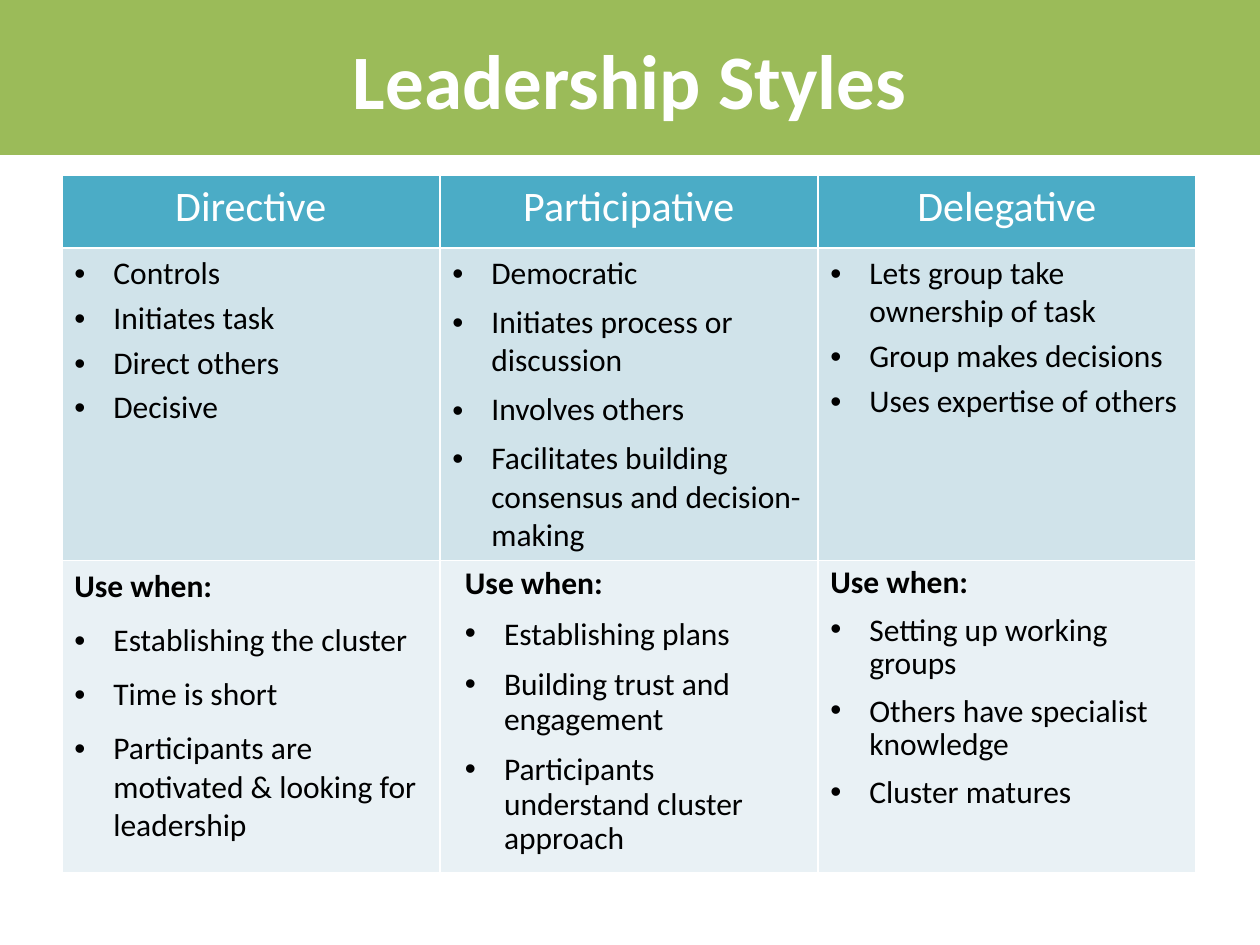
from lxml import etree
from pptx import Presentation
from pptx import util as u
from pptx.dml.color import RGBColor
from pptx.enum import shapes, text
from pptx.oxml.ns import qn


def color(fmt, value):
    fmt.solid()
    fmt.fore_color.rgb = RGBColor.from_string(value)


def write(p, words, size, value, bold=False):
    r = p.add_run()
    r.text = words
    font = {"name": "Calibri", "size": u.Pt(size), "bold": bold}
    for key, val in font.items():
        setattr(r.font, key, val)
    color(r.font.fill, value)


prs = Presentation()
prs.slide_width, prs.slide_height = u.Inches(10), u.Inches(7.5)
s = prs.slides.add_slide(prs.slide_layouts[6])

band = s.shapes.add_shape(shapes.MSO_SHAPE.RECTANGLE, u.Inches(0), u.Inches(-0.02),
                          u.Inches(10), u.Inches(1.25))
band.shadow.inherit = False
color(band.fill, "9BBB59")
band.line.fill.background()

title = s.shapes.add_textbox(u.Inches(0), u.Inches(0), u.Inches(10), u.Inches(1.25))
tf = title.text_frame
for key, val in {"word_wrap": True, "vertical_anchor": text.MSO_ANCHOR.MIDDLE}.items():
    setattr(tf, key, val)
tf.paragraphs[0].alignment = text.PP_ALIGN.CENTER
write(tf.paragraphs[0], "Leadership Styles", 44, "FFFFFF", True)

tight = {"space_before": u.Pt(3.6)}
after = {"space_after": u.Pt(6)}
loose = {"space_before": u.Pt(9)}
use = "Use when:"
rows = [
    (0.58, "4BACC6", [
        (["Directive"], 0, {}),
        (["Participative"], 0, {}),
        (["Delegative"], 0, {}),
    ]),
    (2.48, "D0E3EA", [
        (["Controls", "Initiates task", "Direct others", "Decisive"], 0, tight),
        (["Democratic", "Initiates process or discussion", "Involves others",
          "Facilitates building consensus and decision-making"], 0, after),
        (["Lets group take ownership of task", "Group makes decisions",
          "Uses expertise of others"], 0, tight),
    ]),
    (2.48, "E9F1F5", [
        ([use, "Establishing the cluster", "Time is short",
          "Participants are motivated & looking for leadership"], 0, loose),
        ([use, "Establishing plans", "Building trust and engagement",
          "Participants understand cluster approach"], 0.1, {**loose, "line_spacing": 0.9}),
        ([use, "Setting up working groups", "Others have specialist knowledge",
          "Cluster matures"], 0, {**loose, "line_spacing": 0.85}),
    ]),
]

table = s.shapes.add_table(3, 3, u.Inches(0.49), u.Inches(1.39),
                           u.Inches(9), u.Inches(5.54)).table
for col in table.columns:
    col.width = u.Inches(3)

for i, (height, fill, cells) in enumerate(rows):
    table.rows[i].height = u.Inches(height)
    for j, (lines, left, spacing) in enumerate(cells):
        cell = table.cell(i, j)
        tcPr = cell._tc.get_or_add_tcPr()
        for side in ("a:lnL", "a:lnR", "a:lnT", "a:lnB"):
            ln = etree.SubElement(tcPr, qn(side), w=str(u.Pt(1)))
            solid = etree.SubElement(ln, qn("a:solidFill"))
            etree.SubElement(solid, qn("a:srgbClr"), val="FFFFFF")
        color(cell.fill, fill)
        tf = cell.text_frame
        for n, line in enumerate(lines):
            p = tf.add_paragraph() if n else tf.paragraphs[0]
            pPr = p._p.get_or_add_pPr()
            if i == 0:
                p.alignment = text.PP_ALIGN.CENTER
            elif line == use:
                pPr.set("marL", str(u.Inches(left)))
            else:
                pPr.set("marL", str(u.Inches(left + 0.31)))
                pPr.set("indent", str(u.Inches(-0.31)))
                etree.SubElement(pPr, qn("a:buFont"), typeface="Arial")
                etree.SubElement(pPr, qn("a:buChar"), char="•")
            for key, val in spacing.items():
                if n or key != "space_before":
                    setattr(p, key, val)
            write(p, line, 18 if i else 24, "000000" if i else "FFFFFF", line == use)

prs.save("out.pptx")
